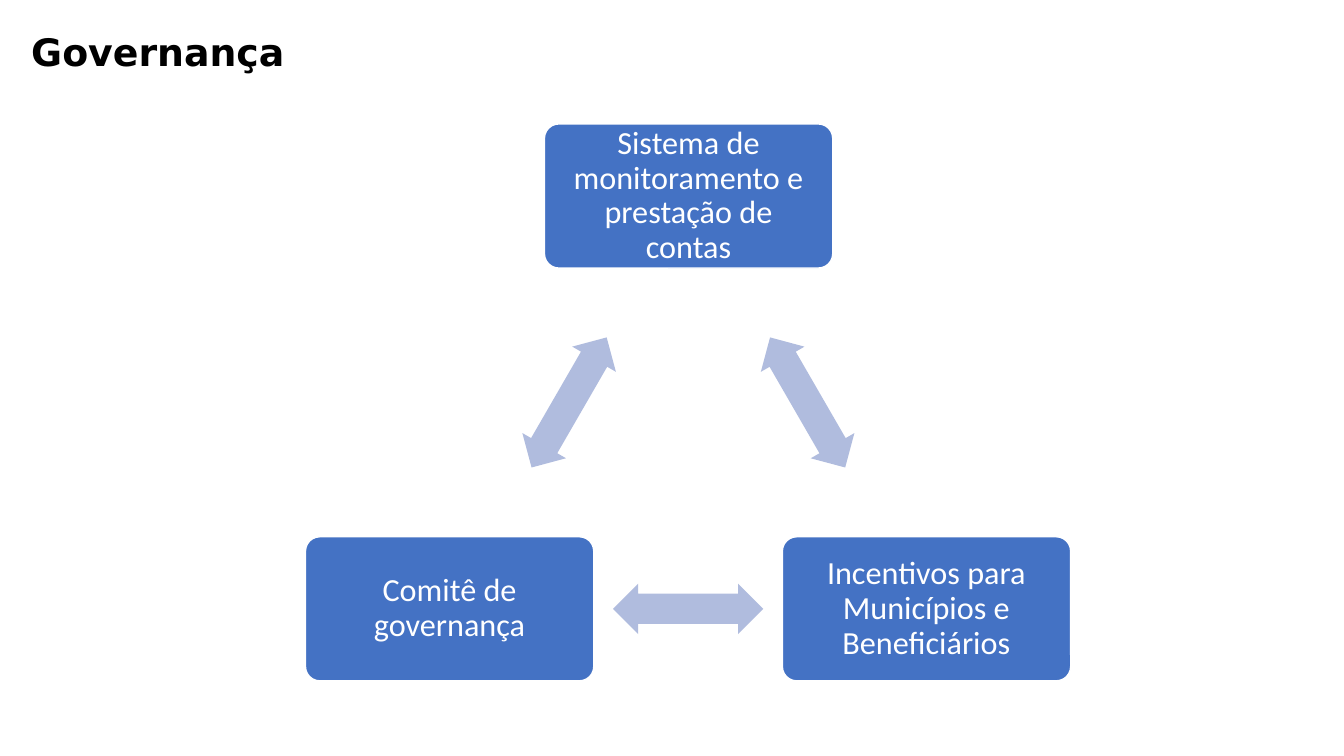
from pptx import Presentation
from pptx.dml.color import RGBColor
from pptx.enum.shapes import MSO_SHAPE as SHAPE
from pptx.enum.text import MSO_ANCHOR as ANCHOR, MSO_AUTO_SIZE as AUTO_SIZE, PP_ALIGN as ALIGN
from pptx.util import Inches, Pt

BLACK = RGBColor(0x00, 0x00, 0x00)
WHITE = RGBColor(0xFF, 0xFF, 0xFF)
BLUE = RGBColor(0x44, 0x72, 0xC4)
LILAC = RGBColor(0xB0, 0xBC, 0xDE)

BOX_W, BOX_H = 2.86, 1.43
ARROW_W, ARROW_H = 1.49, 0.5

prs = Presentation()
prs.slide_width, prs.slide_height = Inches(13.33), Inches(7.5)
s = prs.slides.add_slide(prs.slide_layouts[5])

title = s.shapes.title
title.left, title.top = Inches(0.21), Inches(0.23)
title.width, title.height = Inches(12.64), Inches(1.5)
tf = title.text_frame
tf.text = "Governança"
tf.word_wrap = True
tf.auto_size = AUTO_SIZE.NONE
tf.vertical_anchor = ANCHOR.TOP
p = tf.paragraphs[0]
p.alignment = ALIGN.LEFT
p.font.name, p.font.size, p.font.bold = "DejaVu Sans", Pt(27), True
p.font.color.rgb = BLACK

nodes = [
    ("Sistema de monitoramento e prestação de contas", 6.83, 1.945),
    ("Incentivos para Municípios e Beneficiários", 9.19, 6.04),
    ("Comitê de governança", 4.46, 6.04),
]
rotations = [60, 180, 300]

for i, (text, x, y) in enumerate(nodes):
    box = s.shapes.add_shape(SHAPE.ROUNDED_RECTANGLE, Inches(x - BOX_W / 2),
                             Inches(y - BOX_H / 2), Inches(BOX_W), Inches(BOX_H))
    box.adjustments[0] = 0.1
    box.shadow.inherit = False
    box.fill.solid()
    box.fill.fore_color.rgb = BLUE
    box.line.color.rgb = WHITE
    box.line.width = Pt(1)
    tf = box.text_frame
    tf.text = text
    tf.word_wrap = True
    tf.vertical_anchor = ANCHOR.MIDDLE
    tf.margin_left = tf.margin_right = tf.margin_top = tf.margin_bottom = Inches(0.12)
    p = tf.paragraphs[0]
    p.alignment = ALIGN.CENTER
    p.line_spacing = 0.9
    p.font.name, p.font.size = "Calibri", Pt(23)
    p.font.color.rgb = WHITE

    _, next_x, next_y = nodes[(i + 1) % len(nodes)]
    mid_x, mid_y = (x + next_x) / 2, (y + next_y) / 2
    arrow = s.shapes.add_shape(SHAPE.LEFT_RIGHT_ARROW, Inches(mid_x - ARROW_W / 2),
                               Inches(mid_y - ARROW_H / 2), Inches(ARROW_W), Inches(ARROW_H))
    arrow.adjustments[0] = 0.6
    arrow.adjustments[1] = 0.5
    arrow.rotation = rotations[i]
    arrow.shadow.inherit = False
    arrow.fill.solid()
    arrow.fill.fore_color.rgb = LILAC
    arrow.line.fill.background()

prs.save("out.pptx")
